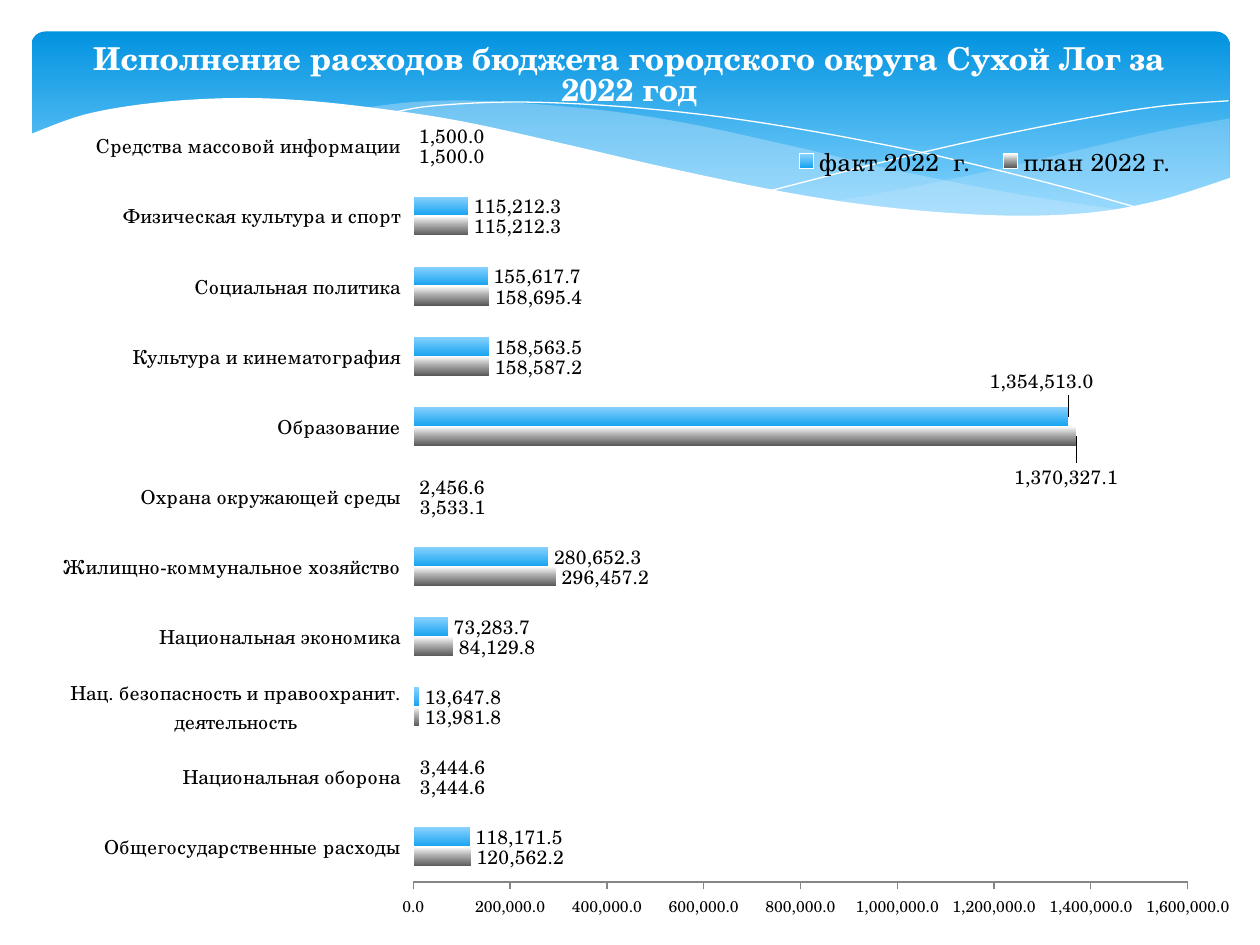
from lxml import etree
from pptx import Presentation
from pptx import util as u
from pptx.chart.data import CategoryChartData
from pptx.dml.color import RGBColor
from pptx.enum import chart as charts, shapes, text
from pptx.oxml.ns import qn

FONT = "TeX Gyre Schola"
NUMBERS = "#,##0.0"
COLUMNS, ROWS = 10, 7.5

# Each wave is a list of edges, each edge a list of (column, row) knots.
RIGHT_BAND = [
    [(9.76, 0.94), (9.21, 1.04), (8.61, 1.18), (7.79, 1.37), (7.06, 1.52), (6.61, 1.6)],
    [(6.61, 1.6), (7.19, 1.67), (7.92, 1.72), (8.54, 1.7), (9.13, 1.62), (9.49, 1.52),
     (9.76, 1.41)],
]
LONG_BAND = [
    [(8.93, 1.67), (8.07, 1.54), (7.06, 1.34), (6.29, 1.16), (5.41, 0.97), (4.65, 0.86),
     (3.8, 0.8), (3.28, 0.81), (2.86, 0.86)],
    [(2.86, 0.86), (3.62, 0.97), (4.49, 1.16), (5.66, 1.43), (6.5, 1.58), (7.22, 1.68),
     (7.96, 1.73), (8.48, 1.72), (8.93, 1.67)],
]
FALLING_LINE = [[(3.09, 0.9), (3.44, 0.84), (4.16, 0.81), (5.1, 0.86), (6.08, 0.98),
                 (7.27, 1.2), (8.31, 1.45), (9.07, 1.66)]]
RISING_LINE = [[(6.13, 1.51), (6.95, 1.3), (7.76, 1.11), (8.66, 0.93), (9.24, 0.84),
                (9.75, 0.8)]]
WHITE_WAVE = [
    [(9.77, 1.41), (9.2, 1.59), (8.63, 1.69), (7.93, 1.71), (7.08, 1.65), (6.26, 1.53),
     (5.29, 1.33), (4.47, 1.14), (3.65, 0.96), (2.92, 0.85), (2.3, 0.79), (1.77, 0.78),
     (1.19, 0.82), (0.67, 0.91), (0.23, 1.07)],
    [(0.23, 2.24), (9.77, 2.24)],
]

# Section of the budget, plan, fact
SPENDING = [
    ("Общегосударственные расходы", 120562.2, 118171.5),
    ("Национальная оборона", 3444.6, 3444.6),
    ("Нац. безопасность и правоохранит. деятельность", 13981.8, 13647.8),
    ("Национальная экономика", 84129.8, 73283.7),
    ("Жилищно-коммунальное хозяйство", 296457.2, 280652.3),
    ("Охрана окружающей среды", 3533.1, 2456.6),
    ("Образование", 1370327.1, 1354513.0),
    ("Культура и кинематография", 158587.2, 158563.5),
    ("Социальная политика", 158695.4, 155617.7),
    ("Физическая культура и спорт", 115212.3, 115212.3),
    ("Средства массовой информации", 1500.0, 1500.0),
]
EDUCATION = 6
# Series name, gradient stops, shift of the education label
SERIES = [
    ("план 2022 г.", [(0, "FFFFFF"), (44, "ABABAB"), (100, "545454")], (-0.056, 0.048)),
    ("факт 2022  г.", [(0, "8CD3FF"), (100, "14A2EF")], (-0.07, -0.042)),
]


def color(hex_string):
    return RGBColor.from_string(hex_string)


def child(parent, tag, **attributes):
    return etree.SubElement(parent, qn(tag), {k: str(v) for k, v in attributes.items()})


def fill_downward(fill, properties, stops):
    fill.gradient()
    fill.gradient_angle = 270
    stop_list = properties.find(".//" + qn("a:gsLst"))
    for old in list(stop_list):
        stop_list.remove(old)
    for share, tone in stops:
        child(child(stop_list, "a:gs", pos=share * 1000), "a:srgbClr", val=tone)


def manual_layout(**values):
    layout = etree.Element(qn("c:layout"))
    manual = child(layout, "c:manualLayout")
    for tag, value in values.items():
        child(manual, "c:" + tag, val=value)
    return layout


def smooth(knots, steps=6):
    """Catmull-Rom points through the knots."""
    padded = [knots[0], *knots, knots[-1]]
    points = [knots[0]]
    for a, b, c, d in zip(padded, padded[1:], padded[2:], padded[3:]):
        for step in range(1, steps + 1):
            t = step / steps
            points.append(tuple(
                (2 * q + (r - p) * t + (2 * p - 5 * q + 4 * r - s) * t ** 2
                 + (3 * q - p - 3 * r + s) * t ** 3) / 2
                for p, q, r, s in zip(a, b, c, d)))
    return points


class BudgetSlide:
    def __init__(self, deck):
        self.slide = deck.slides.add_slide(deck.slide_layouts[5])
        self.column = deck.slide_width / COLUMNS
        self.row = deck.slide_height / ROWS

    def grid(self, *lengths):
        """Column and row numbers, in turn, as lengths."""
        return [u.Emu(round(n * (self.row if i % 2 else self.column)))
                for i, n in enumerate(lengths)]

    def banner(self, place, stops):
        banner = self.slide.shapes.add_shape(
            shapes.MSO_SHAPE.ROUNDED_RECTANGLE, *self.grid(*place))
        banner.adjustments[0] = 0.07
        banner.shadow.inherit = False
        banner.line.fill.background()
        fill_downward(banner.fill, banner._element.spPr, stops)

    def wave(self, edges, fill=None, opacity=100):
        """A filled wave, or a white hairline when there is no fill."""
        start, *rest = [self.grid(*point) for edge in edges for point in smooth(edge)]
        builder = self.slide.shapes.build_freeform(*start, scale=1.0)
        builder.add_line_segments(rest, close=fill is not None)
        wave = builder.convert_to_shape()
        wave.shadow.inherit = False
        if fill is None:
            wave.fill.background()
            wave.line.color.rgb = color("FFFFFF")
            wave.line.width = u.Pt(0)
            return
        wave.line.fill.background()
        wave.fill.solid()
        wave.fill.fore_color.rgb = color(fill)
        if opacity < 100:
            tone = wave._element.spPr.find(".//" + qn("a:srgbClr"))
            child(tone, "a:alpha", val=opacity * 1000)

    def spending_chart(self, place):
        data = CategoryChartData(number_format=NUMBERS)
        sections, *amounts = zip(*SPENDING)
        data.categories = sections
        for (name, _, _), values in zip(SERIES, amounts):
            data.add_series(name, values)
        chart = self.slide.shapes.add_chart(
            charts.XL_CHART_TYPE.BAR_CLUSTERED, *self.grid(*place), data).chart
        chart.has_title = False
        chart.font.name, chart.font.size = FONT, u.Pt(11)
        chart.font.color.rgb = color("000000")
        self.legend(chart)
        self.axes(chart)
        plot = chart.plots[0]
        plot.gap_width, plot.overlap, plot.vary_by_categories = 150, 0, False
        for series, (_, stops, shift) in zip(plot.series, SERIES):
            self.bars(series, stops, shift)
        area = chart._chartSpace.find(".//" + qn("c:plotArea"))
        for old in area.findall(qn("c:layout")):
            area.remove(old)
        area.insert(0, manual_layout(layoutTarget="inner", xMode="edge", yMode="edge",
                                     x=0.319, y=0.006, w=0.645, h=0.908))

    def legend(self, chart):
        chart.has_legend = True
        legend = chart.legend
        legend.position = charts.XL_LEGEND_POSITION.TOP
        legend.include_in_layout = False
        legend.font.size = u.Pt(14)
        position = legend._element.find(qn("c:legendPos"))
        position.addnext(manual_layout(xMode="edge", yMode="edge",
                                       x=0.62, y=0.04, w=0.35, h=0.05))

    def axes(self, chart):
        for axis in (chart.category_axis, chart.value_axis):
            axis.has_major_gridlines = False
            axis.major_tick_mark = charts.XL_TICK_MARK.OUTSIDE
        chart.category_axis.format.line.fill.background()
        amounts = chart.value_axis
        amounts.minimum_scale, amounts.maximum_scale = 0, 1600000
        amounts.major_unit = 200000
        amounts.format.line.color.rgb = color("868686")
        amounts.tick_labels.font.size = u.Pt(9)
        amounts.tick_labels.number_format = NUMBERS
        amounts.tick_labels.number_format_is_linked = False

    def bars(self, series, stops, shift):
        fill_downward(series.format.fill, series._element.spPr, stops)
        series.format.line.color.rgb = color("FFFFFF")
        series.format.line.width = u.Pt(0.75)
        labels = series.data_labels
        labels.show_value = True
        labels.number_format, labels.number_format_is_linked = NUMBERS, False
        labels.position = charts.XL_LABEL_POSITION.OUTSIDE_END
        series.points[EDUCATION].data_label.position = charts.XL_LABEL_POSITION.OUTSIDE_END
        moved = series._element.find(".//" + qn("c:dLbl"))
        moved.find(qn("c:idx")).addnext(manual_layout(x=shift[0], y=shift[1]))

    def title(self, words, place):
        title = self.slide.shapes.title
        title.left, title.top, title.width, title.height = self.grid(*place)
        frame = title.text_frame
        frame.text = words
        frame.word_wrap, frame.auto_size = True, text.MSO_AUTO_SIZE.NONE
        frame.vertical_anchor = text.MSO_ANCHOR.TOP
        frame.margin_top, frame.margin_bottom = u.Inches(0.17), 0
        heading = frame.paragraphs[0]
        heading.alignment, heading.line_spacing = text.PP_ALIGN.CENTER, 0.8
        heading.font.name, heading.font.size, heading.font.bold = FONT, u.Pt(18), True
        heading.font.color.rgb = color("FFFFFF")
        self.slide.shapes._spTree.append(title._element)  # in front of the banner


def main():
    deck = Presentation()
    deck.slide_width, deck.slide_height = u.Inches(10), u.Inches(7.5)
    page = BudgetSlide(deck)
    page.banner((0.25, 0.25, 9.51, 1.56), [(0, "0293E0"), (90, "83D3FE")])
    page.wave(RIGHT_BAND, "C6E7FC", 29)
    page.wave(LONG_BAND, "C6E7FC", 40)
    page.wave(FALLING_LINE)
    page.wave(RISING_LINE)
    page.wave(WHITE_WAVE, "FFFFFF")
    page.spending_chart((0.24, 0.84, 9.53, 6.74))
    page.title("Исполнение расходов бюджета городского округа Сухой Лог за 2022 год",
               (0.35, 0.2, 9.29, 0.55))
    deck.save("out.pptx")


if __name__ == "__main__":
    main()
